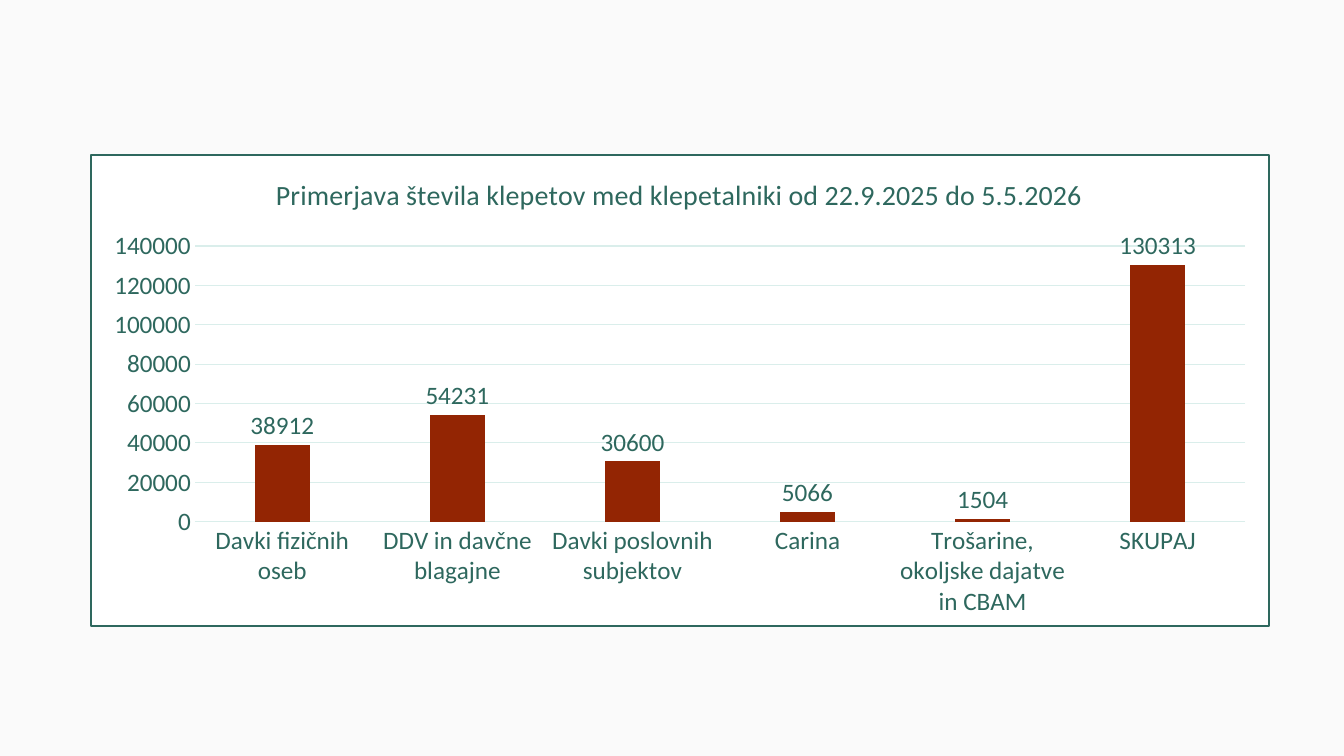
from lxml import etree
from pptx import Presentation
from pptx import util as u
from pptx.chart import data as chart_data
from pptx.dml import color
from pptx.enum import chart as ch
from pptx.oxml import ns

GREEN = "2E685E"
PALE_GREEN = "DAEEEB"
RUST = "932503"
FONT = "Calibri"
TITLE = "Primerjava števila klepetov med klepetalniki od 22.9.2025 do 5.5.2026"
CHATS = {
    "Davki fizičnih oseb": 38912,
    "DDV in davčne blagajne": 54231,
    "Davki poslovnih subjektov": 30600,
    "Carina": 5066,
    "Trošarine, okoljske dajatve in CBAM": 1504,
    "SKUPAJ": 130313,
}


def rgb(value):
    return color.RGBColor.from_string(value)


def set_font(font, size):
    font.name = FONT
    font.size = u.Pt(size)
    font.bold = False
    font.color.rgb = rgb(GREEN)


def set_line(line, value, width):
    line.color.rgb = rgb(value)
    line.width = u.Pt(width)


def add_solid_fill(parent, value):
    fill = etree.SubElement(parent, ns.qn("a:solidFill"))
    etree.SubElement(fill, ns.qn("a:srgbClr"), val=value)


def frame_chart(chart, fill, border, width):
    props = etree.Element(ns.qn("c:spPr"), nsmap=ns.nsdecls and {"a": ns.namespaces("a")["a"]})
    add_solid_fill(props, fill)
    line = etree.SubElement(props, ns.qn("a:ln"), w=str(u.Pt(width)))
    add_solid_fill(line, border)
    chart.element.find(ns.qn("c:chart")).addnext(props)


def add_title(chart, words):
    chart.has_title = True
    para = chart.chart_title.text_frame.paragraphs[0]
    span = para.add_run()
    span.text = words
    set_font(span.font, 20)
    chart.chart_title.include_in_layout = False


def format_axes(chart):
    for axis in (chart.category_axis, chart.value_axis):
        axis.major_tick_mark = ch.XL_TICK_MARK.NONE
        axis.minor_tick_mark = ch.XL_TICK_MARK.NONE
        set_font(axis.tick_labels.font, 18)
    set_line(chart.category_axis.format.line, PALE_GREEN, 0.75)
    values = chart.value_axis
    values.minimum_scale = 0
    values.maximum_scale = 140000
    values.major_unit = 20000
    values.format.line.fill.background()
    values.has_major_gridlines = True
    set_line(values.major_gridlines.format.line, PALE_GREEN, 0.75)


def format_columns(plot):
    plot.gap_width = 219
    plot.overlap = -27
    plot.vary_by_categories = False
    series = plot.series[0]
    series.invert_if_negative = False
    series.format.fill.solid()
    series.format.fill.fore_color.rgb = rgb(RUST)
    labels = series.data_labels
    labels.show_value = True
    labels.position = ch.XL_LABEL_POSITION.OUTSIDE_END
    set_font(labels.font, 18)


def add_column_chart(page):
    table = chart_data.CategoryChartData()
    table.categories = list(CHATS)
    table.add_series("Series 1", list(CHATS.values()))
    chart = page.shapes.add_chart(
        ch.XL_CHART_TYPE.COLUMN_CLUSTERED,
        u.Cm(2.26), u.Cm(3.89), u.Cm(29.74), u.Cm(11.91), table,
    ).chart
    chart.has_legend = False
    set_font(chart.font, 10)
    add_title(chart, TITLE)
    format_axes(chart)
    format_columns(chart.plots[0])
    frame_chart(chart, "FFFFFF", GREEN, 1.5)


def main():
    deck = Presentation()
    deck.slide_width = u.Cm(33.87)
    deck.slide_height = u.Cm(19.05)
    page = deck.slides.add_slide(deck.slide_layouts[6])
    page.background.fill.solid()
    page.background.fill.fore_color.rgb = rgb("FAFAFA")
    add_column_chart(page)
    deck.save("out.pptx")


if __name__ == "__main__":
    main()
